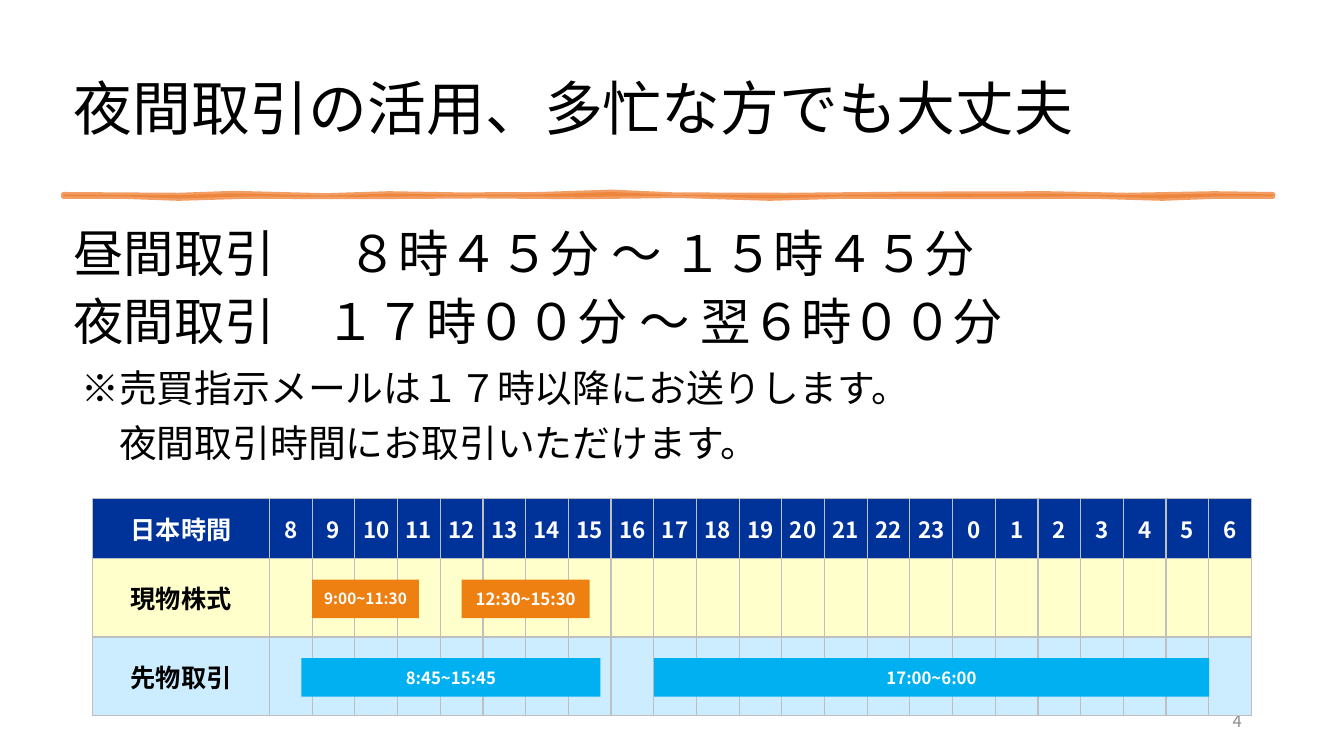
from dataclasses import dataclass

from lxml import etree
from pptx import Presentation
from pptx import util as u
from pptx.dml.color import RGBColor
from pptx.enum import shapes, text
from pptx.oxml import ns


@dataclass(frozen=True)
class Theme:
    """Colours, font and type sizes of the slide."""
    font: str = "Noto Sans CJK JP"
    black: str = "000000"
    white: str = "FFFFFF"
    grey: str = "8C8C8C"
    grid: str = "BFBFBF"
    rule: str = "ED7D31"
    header: str = "003399"
    stock_row: str = "FFFFCC"
    futures_row: str = "CCECFF"
    stock_bar: str = "EE8012"
    futures_bar: str = "00B0F0"
    title: int = 42
    body: int = 36
    note: int = 27
    label: int = 18
    hour: int = 16
    small: int = 12
    tiny: int = 11


T = Theme()
FIRST_HOUR, HOURS = 8, 23
SESSIONS = [
    ("現物株式", T.stock_row, T.stock_bar,
     [(9, 11.5, "9:00~11:30", T.tiny), (12.5, 15.5, "12:30~15:30", T.small)]),
    ("先物取引", T.futures_row, T.futures_bar,
     [(8.75, 15.75, "8:45~15:45", T.small), (17, 30, "17:00~6:00", T.small)]),
]
RULE_TOP = [(0, 0), (2.9, .02), (4.3, -.03), (6.6, .03), (8.2, -.02), (10, .01),
            (12, 0), (13.8, -.06), (15.4, .01), (18.2, .02), (21.5, -.01),
            (24.8, -.02), (26.8, .02), (29, -.02), (30.48, 0)]
RULE_BOTTOM = [(30.48, .05), (29, .05), (27.7, .1), (26, .05), (22.5, .06),
               (19.6, .05), (17.8, .1), (15.5, .03), (13, .06), (10.5, .04),
               (7.5, .06), (4.6, .05), (2.9, .1), (1.5, .05), (0, .05)]


def rgb(value):
    """Return a colour object."""
    return RGBColor.from_string(value)


def style(p, size, color, align=text.PP_ALIGN.LEFT, bold=False):
    """Format a whole paragraph."""
    p.alignment = align
    f = p.font
    f.size, f.bold, f.name = u.Pt(size), bold, T.font
    f.color.rgb = rgb(color)
    latin = p._p.pPr.find(ns.qn("a:defRPr")).find(ns.qn("a:latin"))
    latin.addnext(latin.makeelement(ns.qn("a:ea"), {"typeface": T.font}))


def add_textbox(s, box):
    """Add a wrapping text box and return its frame."""
    tf = s.shapes.add_textbox(*map(u.Cm, box)).text_frame
    tf.word_wrap = True
    return tf


def add_lines(tf, lines, size):
    """Write lines of text and yield each paragraph before it is styled."""
    for i, line in enumerate(lines):
        p = tf.paragraphs[0] if i == 0 else tf.add_paragraph()
        p.text = line
        p.line_spacing = 0.9
        p.space_before = u.Pt(10 if i else 0)
        yield p
        style(p, size, T.black)


def add_title(s, box, words):
    """Place and format the title placeholder."""
    sp = s.shapes.title
    sp.left, sp.top, sp.width, sp.height = map(u.Cm, box)
    tf = sp.text_frame
    tf.text = words
    tf.vertical_anchor = text.MSO_ANCHOR.BOTTOM
    tf.auto_size = text.MSO_AUTO_SIZE.NONE
    p = tf.paragraphs[0]
    p.line_spacing = 0.9
    style(p, T.title, T.black)


def add_rule(s, left, top):
    """Draw the uneven brush line under the title."""
    points = [(u.Cm(left + x), u.Cm(top + y)) for x, y in RULE_TOP + RULE_BOTTOM]
    builder = s.shapes.build_freeform(*points[0])
    builder.add_line_segments(points[1:], close=True)
    sp = builder.convert_to_shape()
    sp.shadow.inherit = False
    sp.fill.solid()
    sp.fill.fore_color.rgb = rgb(T.rule)
    sp.line.color.rgb = rgb(T.rule)
    sp.line.width = u.Pt(3.5)
    for color in sp._element.spPr.iter(ns.qn("a:srgbClr")):
        etree.SubElement(color, ns.qn("a:alpha"), val="75000")


def add_hours_text(s, box):
    """Write the day and night trading hours, aligned with tabs."""
    lines = ["昼間取引\t８時４５分 ～ １５時４５分", "夜間取引\t１７時００分 ～ 翌６時００分"]
    paragraphs = add_lines(add_textbox(s, box), lines, T.body)
    for p, stop in zip(paragraphs, (6.92, 6.35)):
        tabs = etree.SubElement(p._p.get_or_add_pPr(), ns.qn("a:tabLst"))
        etree.SubElement(tabs, ns.qn("a:tab"), pos=str(u.Cm(stop)), algn="l")
    for p in paragraphs:
        p.space_after = u.Pt(12)


def add_note(s, box):
    """Write the note, its second line indented by one character."""
    lines = ["※売買指示メールは１７時以降にお送りします。", "夜間取引時間にお取引いただけます。"]
    for i, p in enumerate(add_lines(add_textbox(s, box), lines, T.note)):
        p._p.get_or_add_pPr().set("marL", str(u.Pt(T.note * i)))


def add_page_number(s, box, number):
    """Write the page number at the right."""
    tf = add_textbox(s, box)
    tf.vertical_anchor = text.MSO_ANCHOR.MIDDLE
    p = tf.paragraphs[0]
    p.text = number
    style(p, T.small, T.grey, text.PP_ALIGN.RIGHT)


def format_cell(cell, words, fill, size, color):
    """Fill, border and write one table cell."""
    cell.margin_left = cell.margin_right = cell.margin_top = cell.margin_bottom = 0
    cell.vertical_anchor = text.MSO_ANCHOR.MIDDLE
    cell.fill.solid()
    cell.fill.fore_color.rgb = rgb(fill)
    tcPr = cell._tc.get_or_add_tcPr()
    for i, side in enumerate(("lnL", "lnR", "lnT", "lnB")):
        ln = tcPr.makeelement(ns.qn("a:" + side), {"w": str(u.Pt(1))})
        solid = etree.SubElement(ln, ns.qn("a:solidFill"))
        etree.SubElement(solid, ns.qn("a:srgbClr"), val=T.grid)
        tcPr.insert(i, ln)
    p = cell.text_frame.paragraphs[0]
    p.text = words
    style(p, size, color, text.PP_ALIGN.CENTER, True)


def add_bar(s, box, words, fill, size):
    """Draw one trading session bar."""
    sp = s.shapes.add_shape(shapes.MSO_SHAPE.RECTANGLE, *map(u.Cm, box))
    sp.shadow.inherit = False
    sp.fill.solid()
    sp.fill.fore_color.rgb = rgb(fill)
    sp.line.fill.background()
    tf = sp.text_frame
    tf.word_wrap = False
    tf.vertical_anchor = text.MSO_ANCHOR.MIDDLE
    p = tf.paragraphs[0]
    p.text = words
    style(p, size, T.white, text.PP_ALIGN.CENTER, True)


def add_timetable(s, box):
    """Build the hour table and lay the session bars over it."""
    left, top, width, height = box
    label_w, head_h, bar_h = 4.45, 1.5, 0.97
    hour_w = (width - label_w) / HOURS
    row_h = (height - head_h) / len(SESSIONS)
    table = s.shapes.add_table(len(SESSIONS) + 1, HOURS + 1, *map(u.Cm, box)).table
    table.first_row = table.horz_banding = False
    for i, column in enumerate(table.columns):
        column.width = u.Cm(hour_w if i else label_w)
    for i, row in enumerate(table.rows):
        row.height = u.Cm(row_h if i else head_h)
    hours = [str((FIRST_HOUR + i) % 24) for i in range(HOURS)]
    for i, words in enumerate(["日本時間"] + hours):
        size = T.hour if i else T.label
        format_cell(table.cell(0, i), words, T.header, size, T.white)
    for r, (name, fill, bar_fill, bars) in enumerate(SESSIONS):
        for i in range(HOURS + 1):
            format_cell(table.cell(r + 1, i), "" if i else name, fill, T.label, T.black)
        bar_top = top + head_h + row_h * r + (row_h - bar_h) / 2 + 0.03
        for start, end, words, size in bars:
            x = left + label_w + (start - FIRST_HOUR) * hour_w
            add_bar(s, (x, bar_top, (end - start) * hour_w, bar_h), words, bar_fill, size)


def main():
    """Build and save the slide."""
    prs = Presentation()
    prs.slide_width, prs.slide_height = u.Cm(33.87), u.Cm(19.05)
    s = prs.slides.add_slide(prs.slide_layouts[5])
    add_title(s, (1.6, 1.5, 30.68, 2.24), "夜間取引の活用、多忙な方でも大丈夫")
    add_rule(s, 1.6, 4.9)
    add_hours_text(s, (1.6, 5.64, 29.67, 3.3))
    add_note(s, (1.8, 9.2, 24.74, 2.77))
    add_page_number(s, (23.93, 17.65, 7.62, 1.02), "4")
    add_timetable(s, (2.34, 12.57, 29.21, 5.46))
    prs.save("out.pptx")


if __name__ == "__main__":
    main()
